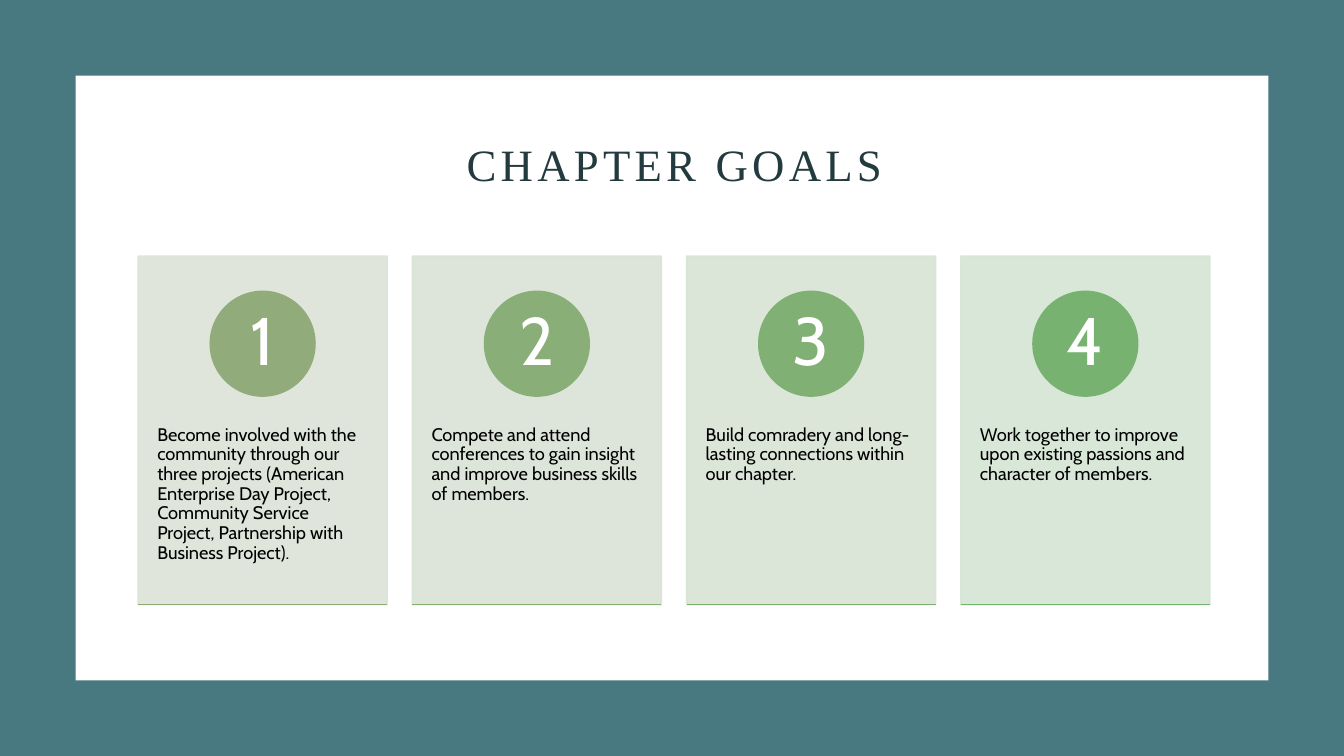
from dataclasses import dataclass

from lxml import etree
from pptx import Presentation
from pptx.dml.color import RGBColor
from pptx.enum import shapes, text
from pptx.oxml.ns import qn
from pptx.util import Inches, Pt

TITLE = "CHAPTER GOALS"
GOALS = [
    ("Become involved with the community through our three projects (American "
     "Enterprise Day Project, Community Service Project, Partnership with "
     "Business Project).", "DCE3D7", "91AC7A", "8DAD78"),
    ("Compete and attend conferences to gain insight and improve business "
     "skills of members.", "DAE3D6", "8AAE77", "86AF75"),
    ("Build comradery and long-lasting connections within our chapter.",
     "D8E4D5", "81B074", "7CB172"),
    ("Work together to improve upon existing passions and character of "
     "members.", "D5E5D5", "77B271", "72B36F"),
]


@dataclass(frozen=True)
class Theme:
    frame: str = "487880"
    panel: str = "FFFFFF"
    title: str = "233A3E"
    body: str = "000000"
    number: str = "FFFFFF"
    title_font: str = "Times New Roman"
    body_font: str = "Cabin"
    title_size: int = 32
    body_size: int = 13
    number_size: int = 48
    line_width: int = 1
    card_opacity: int = 90


THEME = Theme()
WIDTH, HEIGHT, MARGIN = 13.33, 7.5, 0.75
CARD_LEFT, CARD_TOP, CARD_WIDTH, CARD_HEIGHT = 1.37, 2.54, 2.47, 3.46
CARD_STEP = 2.72
CIRCLE_TOP, CIRCLE_SIZE, NUMBER_SIZE = 2.89, 1.04, 0.73
BODY_TOP, BODY_HEIGHT = 3.86, 2.08


def set_opacity(fill, percent):
    color = fill.fore_color._xFill[0]
    etree.SubElement(color, qn("a:alpha"), val=str(percent * 1000))


def add_block(parent, kind, box, color, outlined=False, opacity=100):
    shape = parent.shapes.add_shape(kind, *map(Inches, box))
    shape.shadow.inherit = False
    fills = [shape.fill]
    if outlined:
        shape.line.width = Pt(THEME.line_width)
        fills.append(shape.line.fill)
    else:
        shape.line.fill.background()
    for fill in fills:
        fill.solid()
        fill.fore_color.rgb = RGBColor.from_string(color)
        if opacity < 100:
            set_opacity(fill, opacity)


def write(shape, words, font, size, color, align, anchor, insets):
    frame = shape.text_frame
    frame.word_wrap = True
    frame.auto_size = text.MSO_AUTO_SIZE.NONE
    frame.vertical_anchor = anchor
    frame.margin_left = frame.margin_right = Inches(insets[0])
    frame.margin_top = frame.margin_bottom = Inches(insets[1])
    frame.text = words
    paragraph = frame.paragraphs[0]
    paragraph.alignment = align
    paragraph.line_spacing = 0.9
    paragraph.font.name = font
    paragraph.font.size = Pt(size)
    paragraph.font.color.rgb = RGBColor.from_string(color)
    return paragraph


def add_base_line(parent, left, color):
    bottom = Inches(CARD_TOP + CARD_HEIGHT)
    line = parent.shapes.add_connector(
        shapes.MSO_CONNECTOR.STRAIGHT,
        Inches(left), bottom, Inches(left + CARD_WIDTH), bottom)
    line.line.width = Pt(THEME.line_width)
    line.line.color.rgb = RGBColor.from_string(color)
    etree.SubElement(line._element.spPr, qn("a:effectLst"))


def add_goal(slide, index, goal):
    words, card_color, circle_color, line_color = goal
    left = CARD_LEFT + index * CARD_STEP
    center = left + CARD_WIDTH / 2
    card = slide.shapes.add_group_shape()
    add_block(card, shapes.MSO_SHAPE.RECTANGLE,
              (left, CARD_TOP, CARD_WIDTH, CARD_HEIGHT),
              card_color, True, THEME.card_opacity)
    body = card.shapes.add_textbox(
        *map(Inches, (left, BODY_TOP, CARD_WIDTH, BODY_HEIGHT)))
    write(body, words, THEME.body_font, THEME.body_size, THEME.body,
          text.PP_ALIGN.LEFT, text.MSO_ANCHOR.TOP, (0.19, 0.36))
    add_block(card, shapes.MSO_SHAPE.OVAL,
              (center - CIRCLE_SIZE / 2, CIRCLE_TOP, CIRCLE_SIZE, CIRCLE_SIZE),
              circle_color, True)
    number_top = CIRCLE_TOP + (CIRCLE_SIZE - NUMBER_SIZE) / 2
    number = card.shapes.add_textbox(
        *map(Inches, (center - NUMBER_SIZE / 2, number_top,
                      NUMBER_SIZE, NUMBER_SIZE)))
    write(number, str(index + 1), THEME.body_font, THEME.number_size,
          THEME.number, text.PP_ALIGN.CENTER, text.MSO_ANCHOR.MIDDLE,
          (0.08, 0.01))
    add_base_line(card, left, line_color)


def add_title(slide):
    title = slide.shapes.title
    title.left, title.top, title.width, title.height = map(
        Inches, (1.5, 1.17, 10.38, 0.98))
    paragraph = write(title, TITLE, THEME.title_font, THEME.title_size,
                      THEME.title, text.PP_ALIGN.CENTER,
                      text.MSO_ANCHOR.MIDDLE, (0.1, 0.05))
    paragraph.runs[0].font._element.set("spc", "300")
    slide.shapes._spTree.append(title._element)


def main():
    presentation = Presentation()
    presentation.slide_width = Inches(WIDTH)
    presentation.slide_height = Inches(HEIGHT)
    slide = presentation.slides.add_slide(presentation.slide_layouts[5])
    add_block(slide, shapes.MSO_SHAPE.RECTANGLE, (0, 0, WIDTH, HEIGHT),
              THEME.frame)
    add_block(slide, shapes.MSO_SHAPE.RECTANGLE,
              (MARGIN, MARGIN, WIDTH - 2 * MARGIN, HEIGHT - 2 * MARGIN),
              THEME.panel)
    add_title(slide)
    for index, goal in enumerate(GOALS):
        add_goal(slide, index, goal)
    presentation.save("out.pptx")


if __name__ == "__main__":
    main()
